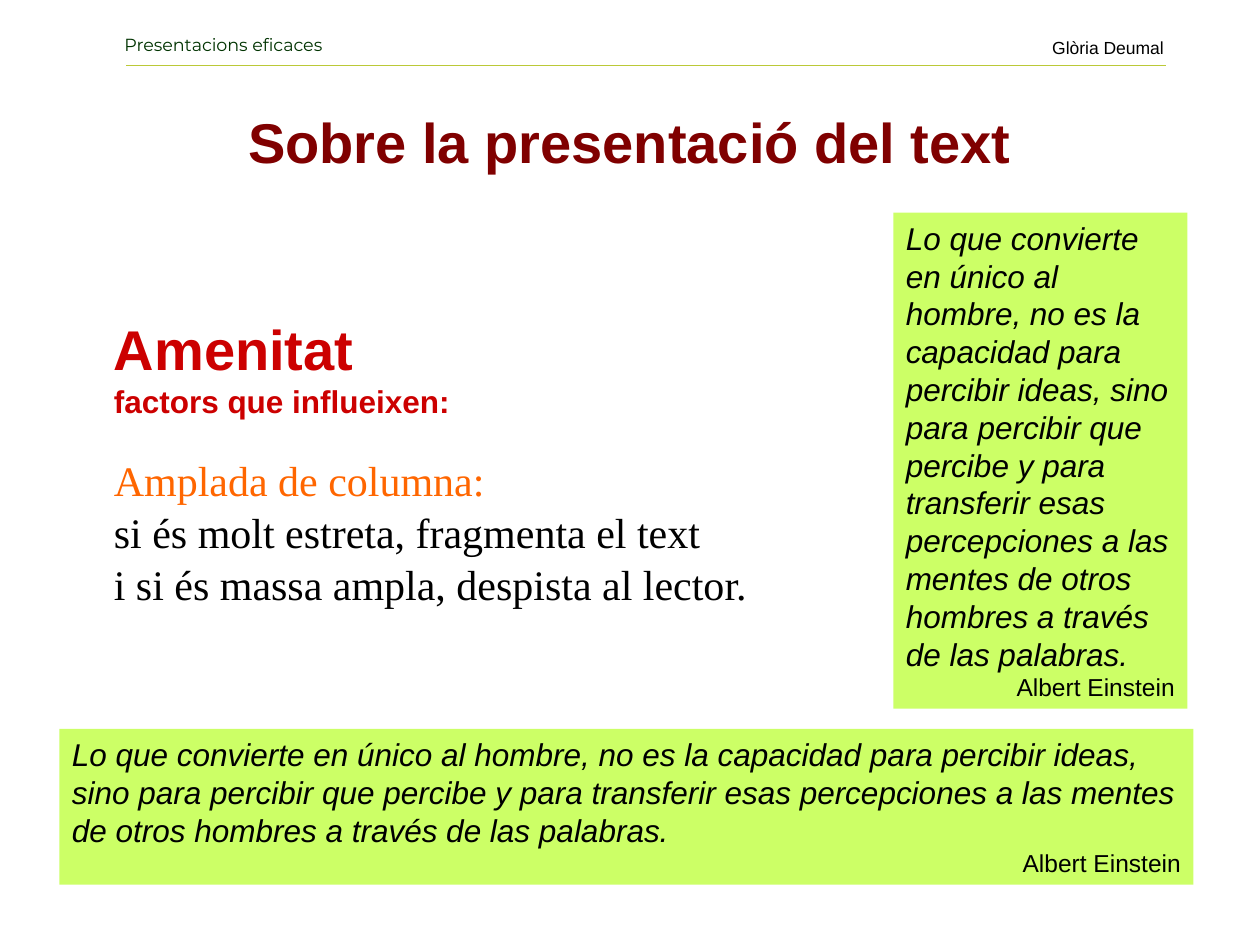
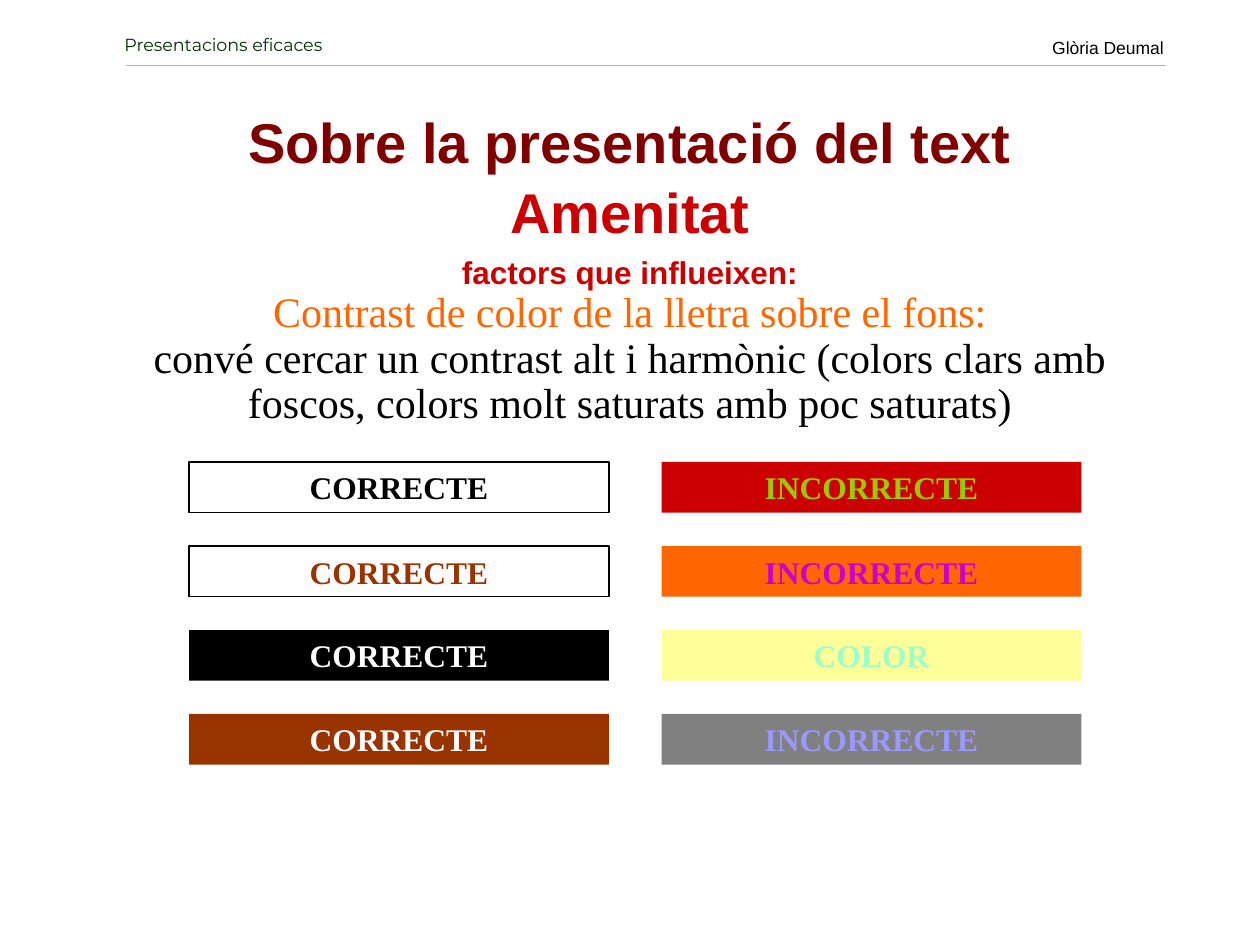
from lxml import etree
from pptx import Presentation
from pptx.dml.color import RGBColor
from pptx.enum.shapes import MSO_CONNECTOR, MSO_SHAPE
from pptx.enum.text import MSO_ANCHOR, PP_ALIGN
from pptx.oxml.ns import qn
from pptx.util import Pt

LEFT, MID, RIGHT = PP_ALIGN.LEFT, PP_ALIGN.CENTER, PP_ALIGN.RIGHT
TOP, CENTER = MSO_ANCHOR.TOP, MSO_ANCHOR.MIDDLE
RECT, LINE = MSO_SHAPE.RECTANGLE, MSO_CONNECTOR.STRAIGHT

HEX = {
    "black": "000000", "white": "FFFFFF", "forest": "003300", "rule": "BBC937",
    "maroon": "800000", "red": "CC0000", "orange": "FF6600", "lime": "CCFF66",
    "brown": "993300", "green": "99CC00", "purple": "CC00CC", "yellow": "FFFF99",
    "mint": "99FFCC", "gray": "808080", "lilac": "9999FF",
}
SANS, SERIF, BRAND = "Arial", "Times New Roman", "Montserrat"

# Text styles: font values plus the colour name
STYLE = {
    "brand": dict(name=BRAND, size=Pt(10), color="forest"),
    "author": dict(name=SANS, size=Pt(10), color="black"),
    "title": dict(name=SANS, size=Pt(32), bold=True, color="maroon"),
    "head": dict(name=SANS, size=Pt(32), bold=True, color="red"),
    "sub": dict(name=SANS, size=Pt(18), bold=True, color="red"),
    "topic": dict(name=SERIF, size=Pt(24), color="orange"),
    "body": dict(name=SERIF, size=Pt(24), color="black"),
    "quote": dict(name=SANS, size=Pt(18), italic=True, color="black"),
    "source": dict(name=SANS, size=Pt(14), color="black"),
    "label": dict(name=SERIF, size=Pt(18), bold=True),
}

QUOTE = ("Lo que convierte en único al hombre, no es la capacidad para percibir ideas, "
         "sino para percibir que percibe y para transferir esas percepciones a las mentes "
         "de otros hombres a través de las palabras.")
HEADS = [("Amenitat", "head"), ("factors que influeixen:", "sub")]

# Text, ink and fill of each sample, one list per column
SAMPLES = [
    [("CORRECTE", "black", "white"), ("CORRECTE", "brown", "white"),
     ("CORRECTE", "white", "black"), ("CORRECTE", "white", "brown")],
    [("INCORRECTE", "green", "red"), ("INCORRECTE", "purple", "orange"),
     ("COLOR", "mint", "yellow"), ("INCORRECTE", "lilac", "gray")],
]


def tint(name):
    return RGBColor.from_string(HEX[name])


class Deck:
    def __init__(self):
        self.prs = Presentation()
        self.prs.slide_width, self.prs.slide_height = Pt(720), Pt(540)
        self.slide = None

    def page(self, title):
        """Start a slide with the shared header and title."""
        self.slide = self.prs.slides.add_slide(self.prs.slide_layouts[6])
        self.text((64, 16, 143, 19), [("Presentacions eficaces", "brand")])
        self.rule(72, 666, 37.5)
        self.text((576, 17.5, 96, 19), [("Glòria Deumal", "author")], align=RIGHT)
        self.text((36, 49, 648, 63), [(title, "title")], align=MID, anchor=CENTER)

    def rule(self, left, right, y):
        line = self.slide.shapes.add_connector(LINE, Pt(left), Pt(y), Pt(right), Pt(y))
        line.line.color.rgb = tint("rule")
        line.line.width = Pt(0.75)
        etree.SubElement(line._element.spPr, qn("a:effectLst"))

    def label(self, shape, rows, anchor=TOP, **para):
        """Fill a shape with (text, style, extra paragraph values) rows."""
        frame = shape.text_frame
        frame.word_wrap = True
        frame.vertical_anchor = anchor
        for i, (text, style, *more) in enumerate(rows):
            par = frame.add_paragraph() if i else frame.paragraphs[0]
            values = {"alignment": LEFT, **para, **(more[0] if more else {})}
            for key, value in values.items():
                setattr(par, key, value)
            run = par.add_run()
            run.text = text
            look = dict(STYLE[style] if isinstance(style, str) else style)
            run.font.color.rgb = tint(look.pop("color"))
            for key, value in look.items():
                setattr(run.font, key, value)

    def text(self, area, rows, align=LEFT, **form):
        box = self.slide.shapes.add_textbox(*map(Pt, area))
        self.label(box, rows, alignment=align, **form)

    def panel(self, area, fill, rows, edge=None, **form):
        box = self.slide.shapes.add_shape(RECT, *map(Pt, area))
        box.shadow.inherit = False
        box.fill.solid()
        box.fill.fore_color.rgb = tint(fill)
        if edge:
            box.line.color.rgb = tint(edge)
            box.line.width = Pt(0.75)
        else:
            box.line.fill.background()
        self.label(box, rows, **form)

    def quote(self, area):
        self.panel(area, "lime", [(QUOTE, "quote"),
                                  ("Albert Einstein", "source", {"alignment": RIGHT})])

    def sample(self, area, text, ink, fill):
        edge = "black" if fill == "white" else None
        style = {**STYLE["label"], "color": ink}
        self.panel(area, fill, [(text, style)], edge, anchor=CENTER, alignment=MID)


def width_page(deck):
    deck.page("Sobre la presentació del text")
    near = {"space_before": Pt(1)}
    deck.text((58, 169, 405, 190), HEADS + [
        ("Amplada de columna:", "topic", {"space_before": Pt(20)}),
        ("si és molt estreta, fragmenta el text", "body", near),
        ("i si és massa ampla, despista al lector.", "body", near),
    ], anchor=CENTER)
    deck.quote((510.5, 121.5, 168, 283.5))
    deck.quote((34, 416.5, 648, 89))


def contrast_page(deck):
    deck.page("Sobre la presentació del text")
    deck.text((54, 104, 612, 150), HEADS + [
        ("Contrast de color de la lletra sobre el fons:", "topic"),
        ("convé cercar un contrast alt i harmònic (colors clars amb foscos, "
         "colors molt saturats amb poc saturats)", "body"),
    ], align=MID, anchor=CENTER, line_spacing=Pt(26))
    for col, group in enumerate(SAMPLES):
        for row, (text, ink, fill) in enumerate(group):
            deck.sample((108 + 270 * col, 264 + 48 * row, 240, 29), text, ink, fill)


def main():
    deck = Deck()
    width_page(deck)
    contrast_page(deck)
    deck.prs.save("out.pptx")


if __name__ == "__main__":
    main()
